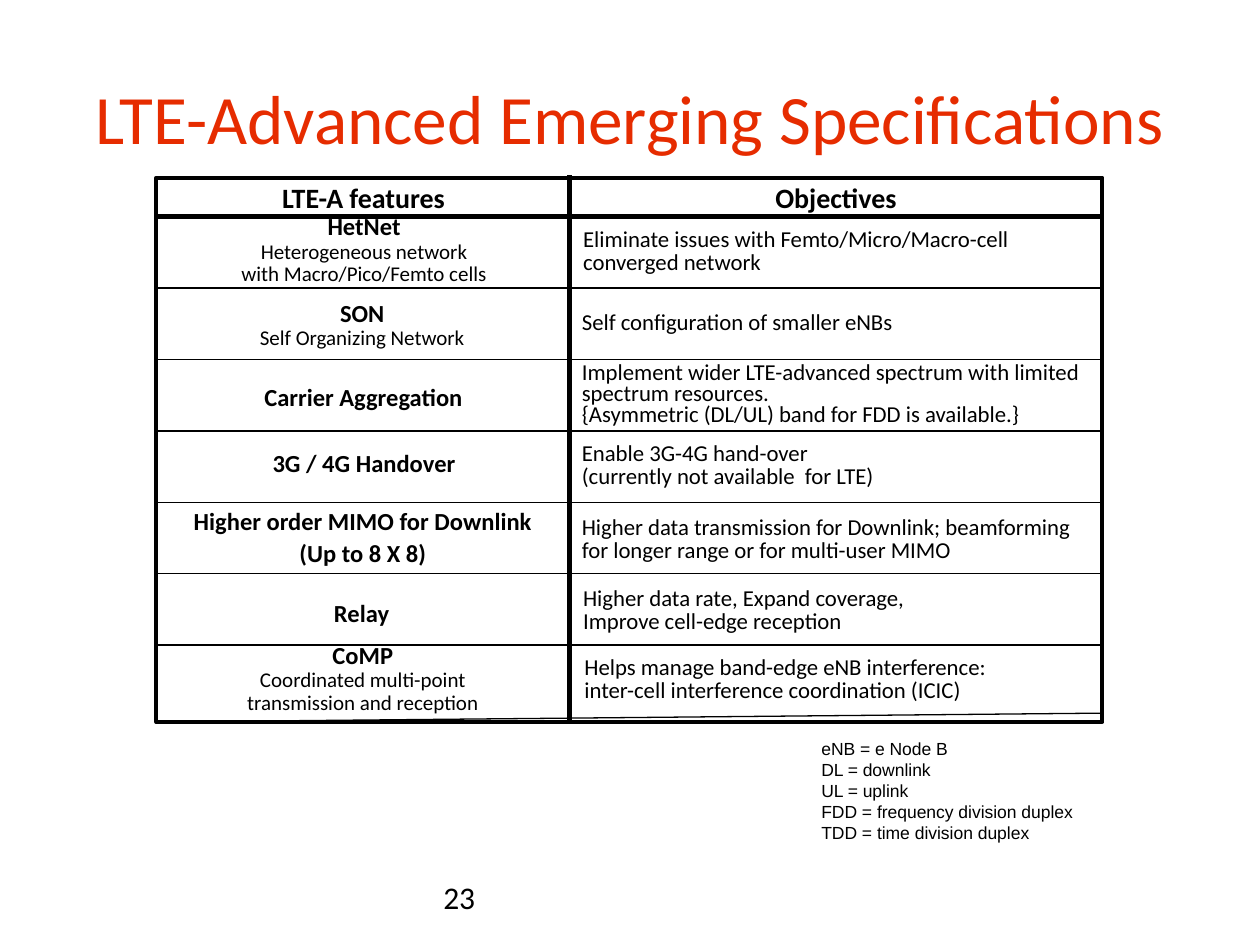
"""Build the LTE-Advanced emerging specifications slide."""
from dataclasses import dataclass
from lxml import etree
from pptx import Presentation
from pptx import util as u
from pptx.dml.color import RGBColor
from pptx.enum import shapes, text
from pptx.oxml import ns
from pptx.slide import Slide

BLACK = RGBColor(0x00, 0x00, 0x00)
RED = RGBColor(0xE6, 0x2C, 0x00)
LEFT, RIGHT, DIVIDER = 1.25, 8.75, 4.52
HEADER_BOTTOM, LAST_RULE, TABLE_BOTTOM = 1.72, 5.12, 5.73
RULE_GAP = (LAST_RULE - HEADER_BOTTOM) / 6
TIGHT = u.Pt(13)
LOOSE = 1.1

FEATURES = [
    (1.26, 1.68, 3.26, 0.65, [("HetNet", 14, True, TIGHT),
                              ("Heterogeneous network", 12, False, TIGHT),
                              ("with Macro/Pico/Femto cells", 12, False, TIGHT)]),
    (1.24, 2.29, 3.27, 0.54, [("SON", 14, True, LOOSE),
                              ("Self Organizing Network", 12, False, TIGHT)]),
    (1.24, 2.96, 3.29, 0.36, [("Carrier Aggregation", 14, True, LOOSE)]),
    (1.26, 3.56, 3.26, 0.29, [("3G / 4G Handover", 14, True, TIGHT)]),
    (1.26, 3.94, 3.24, 0.62, [("Higher order MIMO for Downlink", 14, True, LOOSE),
                              ("(Up to 8 X 8)", 14, True, LOOSE)]),
    (1.24, 4.67, 3.26, 0.36, [("Relay", 14, True, LOOSE)]),
    (1.26, 5.08, 3.24, 0.65, [("CoMP", 14, True, TIGHT),
                              ("Coordinated multi-point", 12, False, TIGHT),
                              ("transmission and reception", 12, False, TIGHT)]),
]

OBJECTIVES = [
    (4.53, 1.77, 4.21, 0.47, TIGHT, ["Eliminate issues with Femto/Micro/Macro-cell",
                                     "converged network"]),
    (4.52, 2.43, 4.24, 0.29, TIGHT, ["Self configuration of smaller eNBs"]),
    (4.52, 2.84, 4.2, 0.61, u.Pt(12),
     ["Implement wider LTE-advanced spectrum with limited spectrum resources.",
      "{Asymmetric (DL/UL) band for FDD is available.}"]),
    (4.52, 3.47, 4.24, 0.47, TIGHT, ["Enable 3G-4G hand-over",
                                     "(currently not available  for LTE)"]),
    (4.52, 4.06, 4.24, 0.47, TIGHT,
     ["Higher data transmission for Downlink; beamforming for longer range "
      "or for multi-user MIMO"]),
    (4.53, 4.62, 4.2, 0.47, TIGHT, ["Higher data rate, Expand coverage,",
                                    "Improve cell-edge reception"]),
    (4.54, 5.17, 4.2, 0.47, TIGHT, ["Helps manage band-edge eNB interference:",
                                    "inter-cell interference coordination (ICIC)"]),
]

ABBREVIATIONS = ["eNB = e Node B", "DL = downlink", "UL = uplink",
                 "FDD = frequency division duplex", "TDD = time division duplex"]


@dataclass
class SlideBuilder:
    """Holds the style and the current slide."""
    slide: Slide
    font: str = "Calibri"
    ink: RGBColor = BLACK

    def add_frame(self, left, top, width, height, weight):
        """Draw an unfilled rectangle."""
        border = self.slide.shapes.add_shape(
            shapes.MSO_SHAPE.RECTANGLE, u.Inches(left), u.Inches(top),
            u.Inches(width), u.Inches(height))
        border.shadow.inherit = False
        border.fill.background()
        border.line.color.rgb = self.ink
        border.line.width = u.Pt(weight)

    def add_rule(self, x1, y1, x2, y2, weight=0.75):
        """Draw a straight line."""
        rule = self.slide.shapes.add_connector(
            shapes.MSO_CONNECTOR.STRAIGHT, u.Inches(x1), u.Inches(y1),
            u.Inches(x2), u.Inches(y2))
        rule.line.color.rgb = self.ink
        rule.line.width = u.Pt(weight)
        etree.SubElement(rule._element.spPr, ns.qn("a:effectLst"))

    def add_text(self, left, top, width, height, lines, align=text.PP_ALIGN.LEFT,
                 anchor=text.MSO_ANCHOR.TOP, font=None, color=None, wrap=True):
        """Add text given as lines of wording, size, weight and spacing."""
        box = self.slide.shapes.add_textbox(
            u.Inches(left), u.Inches(top), u.Inches(width), u.Inches(height))
        frame = box.text_frame
        frame.word_wrap = wrap
        frame.vertical_anchor = anchor
        for index, (wording, size, bold, spacing) in enumerate(lines):
            paragraph = frame.add_paragraph() if index else frame.paragraphs[0]
            paragraph.alignment = align
            paragraph.line_spacing = spacing
            run = paragraph.add_run()
            run.text = wording
            run.font.name = font or self.font
            run.font.size = u.Pt(size)
            run.font.bold = bold
            run.font.color.rgb = color or self.ink


def main():
    """Build and save the slide."""
    deck = Presentation()
    deck.slide_width, deck.slide_height = u.Inches(10), u.Inches(7.5)
    builder = SlideBuilder(deck.slides.add_slide(deck.slide_layouts[6]))
    center = text.PP_ALIGN.CENTER

    builder.add_text(0.5, 0.3, 9, 1.25,
                     [("LTE-Advanced Emerging Specifications", 39.6, False, 1.0)],
                     center, text.MSO_ANCHOR.MIDDLE, color=RED)

    builder.add_frame(1.24, 1.41, 7.51, 4.32, 2.25)
    builder.add_rule(LEFT, HEADER_BOTTOM, RIGHT, HEADER_BOTTOM, 2.5)
    builder.add_rule(DIVIDER, 1.39, DIVIDER, TABLE_BOTTOM, 2.5)
    for row in range(1, 7):
        y = HEADER_BOTTOM + row * RULE_GAP
        builder.add_rule(LEFT, y, RIGHT, y)
    builder.add_rule(LEFT, TABLE_BOTTOM, RIGHT, 5.66)

    for left, width, heading in [(1.26, 3.25, "LTE-A features"),
                                 (4.53, 4.21, "Objectives")]:
        builder.add_text(left, 1.36, width, 0.4, [(heading, 16, True, LOOSE)], center)
    for *place, lines in FEATURES:
        builder.add_text(*place, lines, center)
    for *place, spacing, lines in OBJECTIVES:
        builder.add_text(*place, [(line, 13, False, spacing) for line in lines])

    builder.add_text(6.42, 5.81, 2.22, 0.94,
                     [(line, 10, False, 1.0) for line in ABBREVIATIONS],
                     font="Arial", wrap=False)
    builder.add_text(3.42, 6.92, 2.33, 0.4, [("23", 18, False, 1.0)])
    deck.save("out.pptx")


if __name__ == "__main__":
    main()
